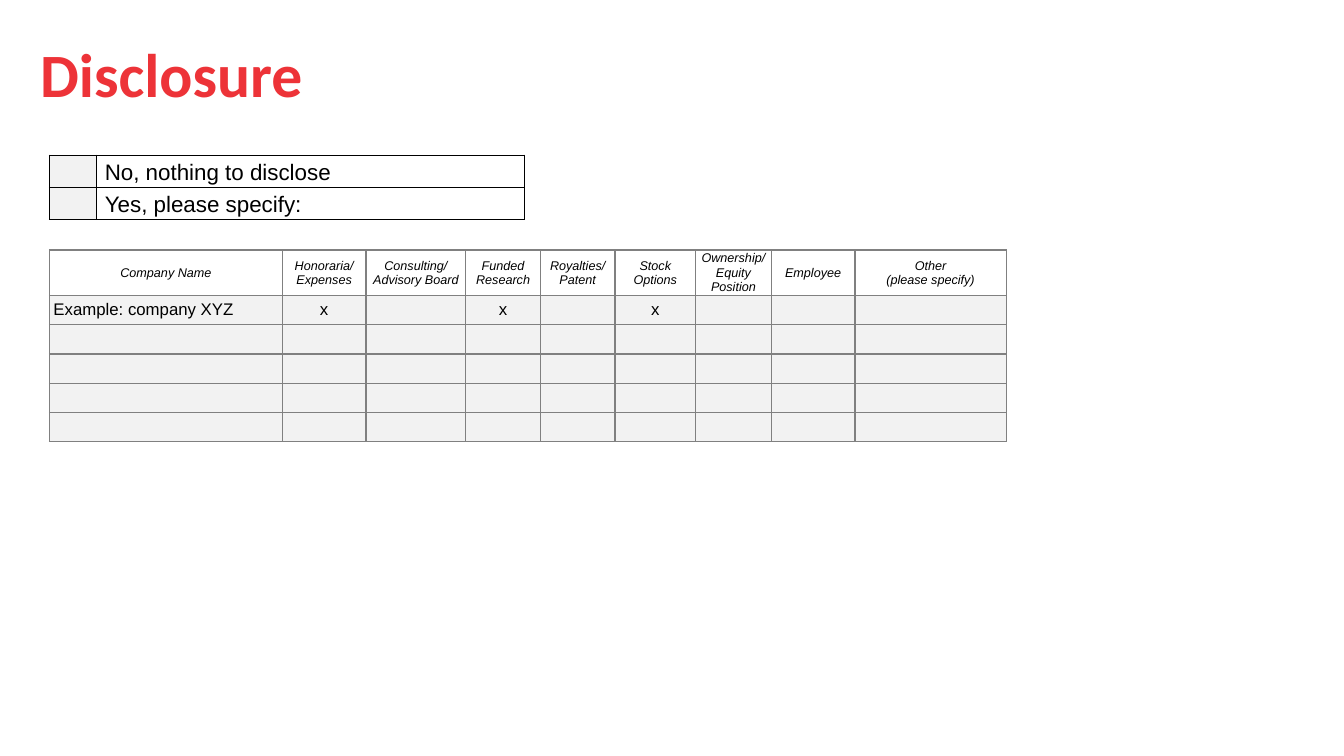
from lxml.etree import SubElement as Sub
from pptx import Presentation
from pptx.dml.color import RGBColor
from pptx.enum.text import MSO_ANCHOR as Anchor, PP_ALIGN as Align
from pptx.oxml.ns import qn
from pptx.util import Pt

PX = 9144
RED = RGBColor(0xED, 0x33, 0x38)
BLACK = RGBColor(0, 0, 0)
GRAY = RGBColor(0x80, 0x80, 0x80)
PALE = RGBColor(0xF2, 0xF2, 0xF2)

HEADS = ["Company Name", "Honoraria/\nExpenses", "Consulting/ Advisory Board",
         "Funded Research", "Royalties/ Patent", "Stock Options",
         "Ownership/ Equity Position", "Employee", "Other\n(please specify)"]
SAMPLE = ["Example: company XYZ", "x", "", "x", "", "x", "", "", ""]


def style(para, size, color=BLACK, name="Arial"):
    """Set the font of a paragraph and return it."""
    font = para.font
    font.name, font.size, font.color.rgb = name, Pt(size), color
    return font


def edge(cell, color):
    """Draw a one-point line on all four sides of a cell."""
    props = cell._tc.get_or_add_tcPr()
    for side in ("lnL", "lnR", "lnT", "lnB"):
        line = Sub(props, qn("a:" + side), w=str(Pt(1)))
        fill = Sub(line, qn("a:solidFill"))
        Sub(fill, qn("a:srgbClr"), val=str(color))


def grid(slide, left, top, cols, rows, color, pad):
    """Add a plain ruled table and return it."""
    table = slide.shapes.add_table(len(rows), len(cols), left * PX, top * PX,
                                   sum(cols) * PX, sum(rows) * PX).table
    table.first_row = table.horz_banding = False
    for col, width in zip(table.columns, cols):
        col.width = width * PX
    for row, height in zip(table.rows, rows):
        row.height = height * PX
    for cell in table.iter_cells():
        cell.margin_left = cell.margin_right = pad * PX
        cell.margin_top = cell.margin_bottom = 0
        edge(cell, color)
        cell.fill.background()
    return table


def shade(cell):
    """Fill a cell with pale gray."""
    cell.fill.solid()
    cell.fill.fore_color.rgb = PALE


def add_title(slide, left, top, width, height):
    """Add the slide title."""
    box = slide.shapes.add_textbox(left * PX, top * PX, width * PX, height * PX)
    frame = box.text_frame
    frame.word_wrap = True
    frame.vertical_anchor = Anchor.MIDDLE
    para = frame.paragraphs[0]
    para.text = "Disclosure"
    para.line_spacing = 0.9
    style(para, 44, RED, "Calibri").bold = True


def add_choice(slide, left, top):
    """Add the table with the no and yes answers."""
    table = grid(slide, left, top, [47, 424], [32, 32], BLACK, 8)
    for row, text in enumerate(["No, nothing to disclose", "Yes, please specify:"]):
        mark, label = table.cell(row, 0), table.cell(row, 1)
        shade(mark)
        style(mark.text_frame.paragraphs[0], 16)
        label.text = text
        label.margin_top = PX
        para = label.text_frame.paragraphs[0]
        para.line_spacing = 1.15
        style(para, 16)


def add_firms(slide, left, top):
    """Add the table of company ties."""
    cols = [231, 83, 99, 74, 74, 80, 75, 83, 150]
    blank = [""] * len(cols)
    lines = [HEADS, SAMPLE] + [blank] * 4
    table = grid(slide, left, top, cols, [45] + [29] * 5, GRAY, 4)
    for row, line in enumerate(lines):
        for col, text in enumerate(line):
            cell = table.cell(row, col)
            cell.text = text
            cell.vertical_anchor = Anchor.MIDDLE
            if row:
                shade(cell)
            for para in cell.text_frame.paragraphs:
                style(para, 12 if row else 9).italic = row == 0
                para.alignment = Align.LEFT if row and not col else Align.CENTER


def main():
    """Build and save the slide."""
    deck = Presentation()
    deck.slide_width, deck.slide_height = 1333 * PX, 750 * PX
    slide = deck.slides.add_slide(deck.slide_layouts[6])
    add_title(slide, 30, 35, 1091, 84)
    add_choice(slide, 49, 154)
    add_firms(slide, 49, 248)
    deck.save("out.pptx")


if __name__ == "__main__":
    main()
